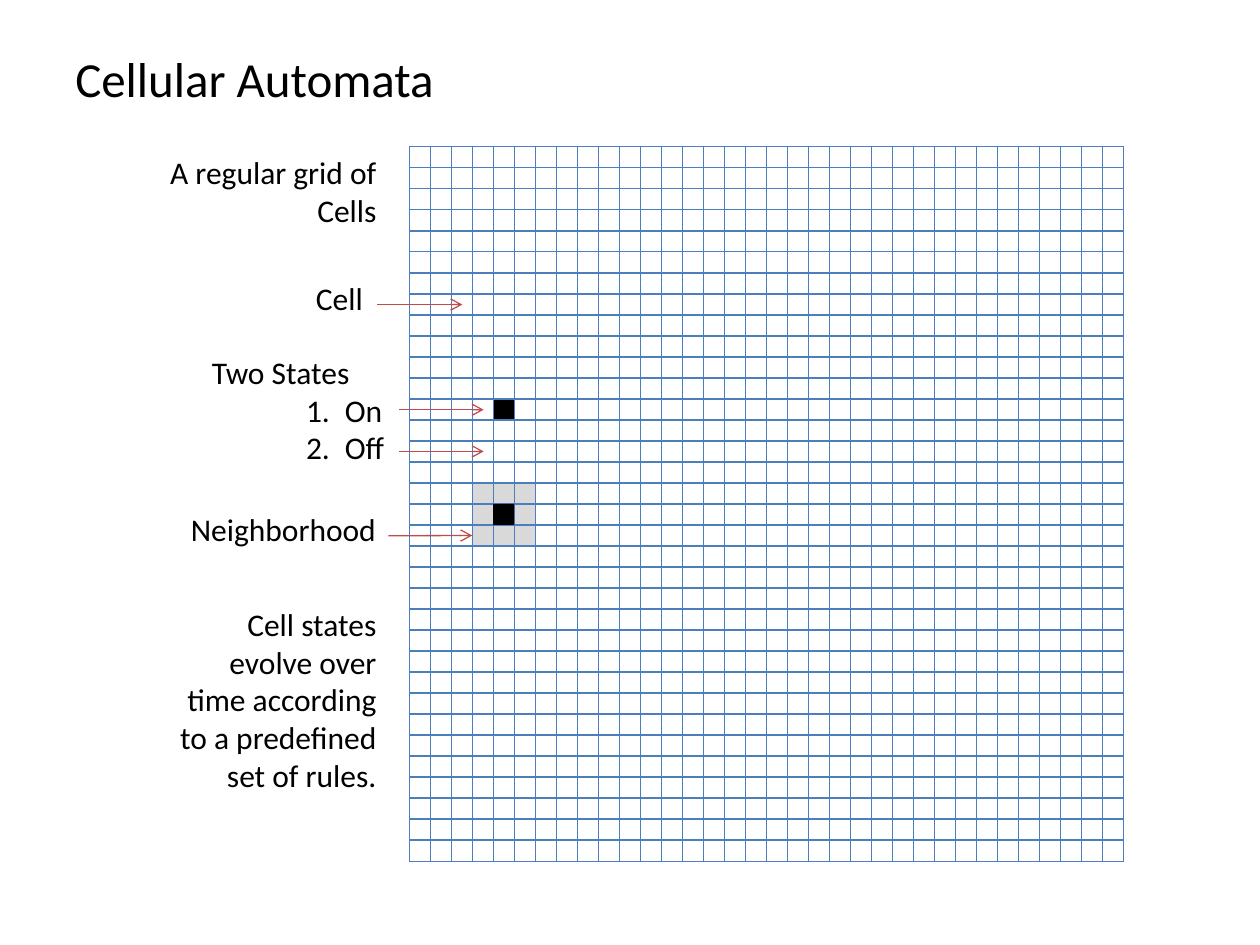
from dataclasses import dataclass
from itertools import product

from lxml import etree
from pptx import Presentation
from pptx import util as u
from pptx.dml.color import RGBColor
from pptx.enum import shapes, text
from pptx.oxml.ns import qn


@dataclass(frozen=True)
class Theme:
    font: str = "Calibri"
    ink: str = "000000"
    grid: str = "4B7EBC"
    arrow: str = "BF4C48"
    neighbor: str = "D9D9D9"
    title_size: int = 28
    body_size: int = 18
    line_width: float = 0.75


GRID_LEFT, GRID_TOP, GRID_SIZE = 8.25, 2.96, 14.4
CELL_COUNT = 34
CELL = GRID_SIZE / CELL_COUNT


class SlideBuilder:
    def __init__(self, slide, theme):
        self.slide = slide
        self.theme = theme

    def cell(self, column, row, color):
        shape = self.slide.shapes.add_shape(
            shapes.MSO_SHAPE.RECTANGLE,
            u.Cm(GRID_LEFT + column * CELL), u.Cm(GRID_TOP + row * CELL),
            u.Cm(CELL), u.Cm(CELL))
        shape.shadow.inherit = False
        shape.fill.solid()
        shape.fill.fore_color.rgb = RGBColor.from_string(color)
        shape.line.fill.background()
        return shape

    def line(self, container, start, end, color):
        connector = container.add_connector(
            shapes.MSO_CONNECTOR.STRAIGHT,
            *(u.Cm(value) for value in (*start, *end)))
        connector.line.color.rgb = RGBColor.from_string(color)
        connector.line.width = u.Pt(self.theme.line_width)
        etree.SubElement(connector._element.spPr, qn("a:effectLst"))
        return connector

    def grid(self):
        group = self.slide.shapes.add_group_shape()
        right, bottom = GRID_LEFT + GRID_SIZE, GRID_TOP + GRID_SIZE
        for index in range(CELL_COUNT + 1):
            x = GRID_LEFT + index * CELL
            self.line(group.shapes, (x, GRID_TOP), (x, bottom), self.theme.grid)
        for index in range(CELL_COUNT + 1):
            y = GRID_TOP + index * CELL
            self.line(group.shapes, (GRID_LEFT, y), (right, y), self.theme.grid)

    def arrow(self, start, end):
        connector = self.line(self.slide.shapes, start, end, self.theme.arrow)
        outline = connector.line._get_or_add_ln()
        etree.SubElement(outline, qn("a:tailEnd"), type="arrow")
        return connector

    def label(self, box, lines, size=None, right=False, wrap=True, numbered_from=None):
        shape = self.slide.shapes.add_textbox(*(u.Cm(value) for value in box))
        frame = shape.text_frame
        frame.word_wrap = wrap
        for index, content in enumerate(lines):
            paragraph = frame.paragraphs[0] if index == 0 else frame.add_paragraph()
            paragraph.alignment = text.PP_ALIGN.RIGHT if right else text.PP_ALIGN.LEFT
            if numbered_from is not None and index >= numbered_from:
                self.number(paragraph)
            run = paragraph.add_run()
            run.text = content
            run.font.name = self.theme.font
            run.font.size = u.Pt(size or self.theme.body_size)
            run.font.color.rgb = RGBColor.from_string(self.theme.ink)
        return shape

    def number(self, paragraph):
        properties = paragraph._p.get_or_add_pPr()
        properties.set("marL", str(u.Cm(2.54)))
        properties.set("indent", str(u.Cm(-0.64)))
        etree.SubElement(properties, qn("a:buAutoNum"), type="arabicPeriod")


def main():
    presentation = Presentation()
    presentation.slide_width, presentation.slide_height = u.Cm(25.4), u.Cm(19.05)
    slide = presentation.slides.add_slide(presentation.slide_layouts[6])
    theme = Theme()
    builder = SlideBuilder(slide, theme)

    center = (4, 17)
    neighbors = {
        (column, row): builder.cell(column, row, theme.neighbor)
        for column, row in product(range(3, 6), range(16, 19))
        if (column, row) != center
    }
    builder.cell(4, 12, theme.ink)
    builder.grid()
    builder.cell(*center, theme.ink)

    builder.label((1.27, 0.85, 7.83, 1.45), ["Cellular Automata"],
                  size=theme.title_size, wrap=False)
    builder.label((3.18, 2.96, 4.66, 2.33), ["A regular grid of Cells"], right=True)
    cell_label = builder.label((6.12, 5.5, 1.48, 1.28), ["Cell"])
    builder.label((4.02, 6.99, 4.23, 2.54), ["Two States", " On", " Off"],
                  numbered_from=1)
    builder.label((3.39, 10.16, 4.44, 1.06), ["Neighborhood"], right=True)
    builder.label((3.18, 12.07, 4.66, 4.45),
                  ["Cell states", "evolve over time according to a predefined set of rules."],
                  right=True)

    builder.arrow((7.6, 6.14), (9.32, 6.14)).begin_connect(cell_label, 3)
    for y in (8.26, 9.1):
        builder.arrow((8.05, y), (9.75, y))
    builder.arrow((7.83, 10.8), (9.53, 10.8)).end_connect(neighbors[3, 18], 1)

    presentation.save("out.pptx")


if __name__ == "__main__":
    main()
